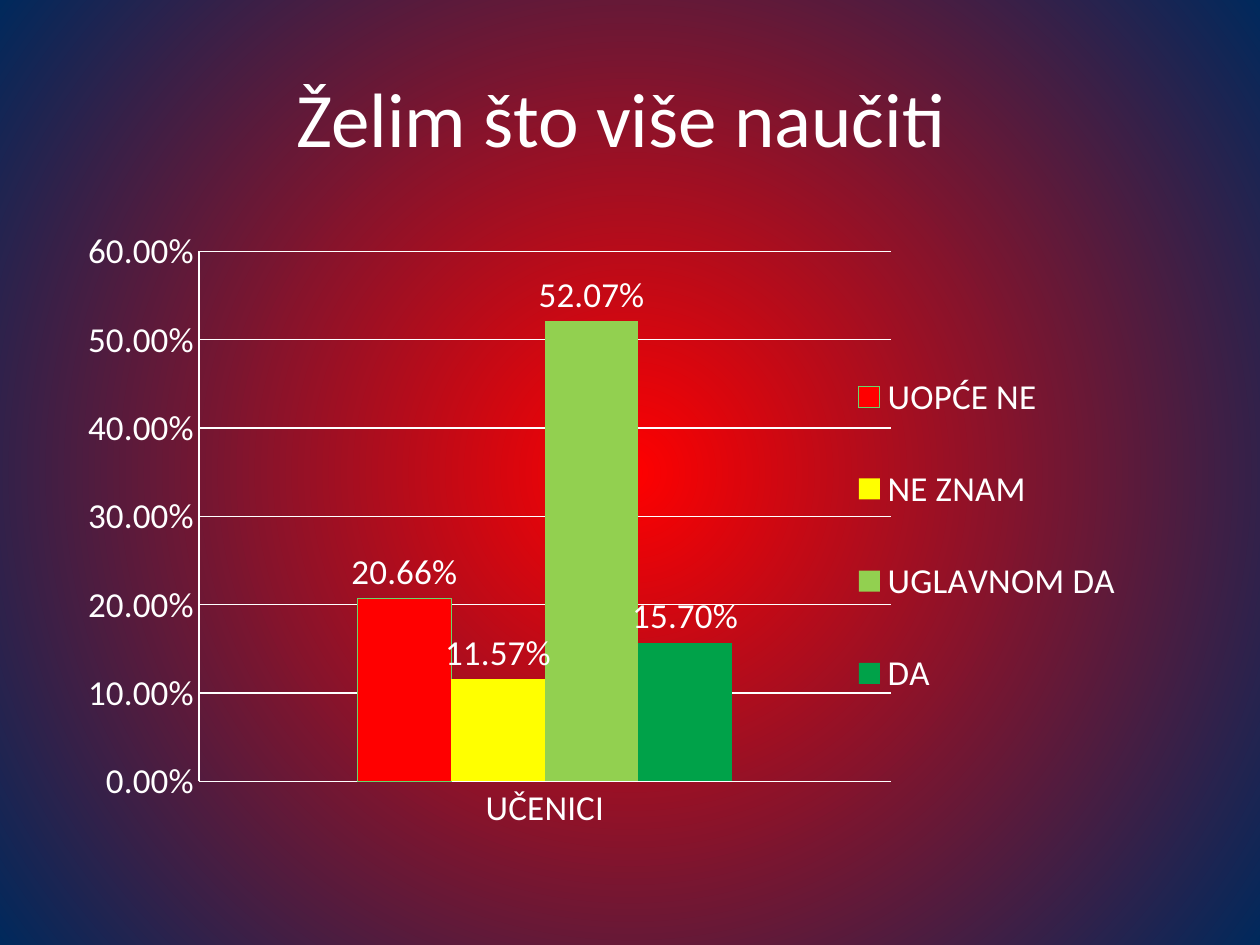
from lxml import etree
from pptx import Presentation
from pptx.chart.data import CategoryChartData
from pptx.dml.color import RGBColor
from pptx.enum.chart import (XL_CHART_TYPE, XL_LABEL_POSITION,
                             XL_LEGEND_POSITION, XL_TICK_MARK)
from pptx.enum.text import MSO_ANCHOR, PP_ALIGN
from pptx.oxml.ns import qn
from pptx.util import Pt

COLUMNS = XL_CHART_TYPE.COLUMN_CLUSTERED
OUTSIDE = XL_LABEL_POSITION.OUTSIDE_END
RIGHT = XL_LEGEND_POSITION.RIGHT
NO_TICK = XL_TICK_MARK.NONE
MIDDLE = MSO_ANCHOR.MIDDLE
CENTER = PP_ALIGN.CENTER

WHITE = RGBColor(0xFF, 0xFF, 0xFF)
RED = RGBColor(0xFF, 0x00, 0x00)
NAVY = RGBColor(0x00, 0x29, 0x5C)
YELLOW = RGBColor(0xFF, 0xFF, 0x00)
LIME = RGBColor(0x92, 0xD0, 0x50)
GREEN = RGBColor(0x00, 0xA2, 0x49)
OUTLINE = RGBColor(0x68, 0xD6, 0x6B)

FONT = "Calibri"
PERCENT = "0.00%"
ANSWERS = [
    ("UOPĆE NE", 0.2066, RED),
    ("NE ZNAM", 0.1157, YELLOW),
    ("UGLAVNOM DA", 0.5207, LIME),
    ("DA", 0.157, GREEN),
]


def px(n):
    """Turn pixels at 126 to the inch into EMU."""
    return round(n * 914400 / 126)


def style_font(font, size):
    """Set the white deck font at a size in points."""
    font.name = FONT
    font.size = Pt(size)
    font.color.rgb = WHITE


def set_background(s):
    """Fill the slide with a gradient spreading from its centre."""
    fill = s.background.fill
    fill.gradient()
    for stop, color, position in zip(fill.gradient_stops, (RED, NAVY), (0, 1)):
        stop.color.rgb = color
        stop.position = position
    grad = s.element.xpath(".//p:bg//a:gradFill")[0]
    grad.remove(grad.find(qn("a:lin")))
    circle = etree.SubElement(grad, qn("a:path"), path="circle")
    etree.SubElement(circle, qn("a:fillToRect"),
                     {side: "50000" for side in "ltrb"})


def add_title(s, text):
    """Place and fill the title placeholder."""
    sp = s.shapes.title
    sp.left, sp.top, sp.width, sp.height = map(px, (63, 38, 1134, 158))
    tf = sp.text_frame
    tf.vertical_anchor = MIDDLE
    p = tf.paragraphs[0]
    p.alignment = CENTER
    r = p.add_run()
    r.text = text
    style_font(r.font, 44)


def set_layout(parent, index, box, inner=False):
    """Pin a chart part to fractions of the chart area."""
    for old in parent.findall(qn("c:layout")):
        parent.remove(old)
    layout = etree.Element(qn("c:layout"))
    parent.insert(index, layout)
    manual = etree.SubElement(layout, qn("c:manualLayout"))
    settings = [("layoutTarget", "inner")] if inner else []
    settings += [("xMode", "edge"), ("yMode", "edge")]
    settings += zip("xywh", map(str, box))
    for tag, val in settings:
        etree.SubElement(manual, qn("c:" + tag), val=val)


def style_axis(axis):
    """Give an axis thin white lines and no ticks."""
    axis.major_tick_mark = axis.minor_tick_mark = NO_TICK
    style_font(axis.tick_labels.font, 20)
    axis.format.line.color.rgb = WHITE
    axis.format.line.width = Pt(0.75)


def style_series(series, color):
    """Colour a series and show its value above the column."""
    series.invert_if_negative = False
    series.format.fill.solid()
    series.format.fill.fore_color.rgb = color
    labels = series.data_labels
    labels.show_value = True
    labels.number_format = PERCENT
    labels.number_format_is_linked = False
    labels.position = OUTSIDE
    style_font(labels.font, 20)


def add_answer_chart(s):
    """Add the column chart of answers with its legend."""
    data = CategoryChartData(number_format=PERCENT)
    data.categories = ["UČENICI"]
    for name, value, _ in ANSWERS:
        data.add_series(name, [value])
    box = map(px, (63, 220, 1134, 624))
    chart = s.shapes.add_chart(COLUMNS, *box, data).chart
    chart.has_title = False
    style_font(chart.font, 10)

    plot = chart.plots[0]
    plot.gap_width = 339
    plot.overlap = 0
    plot.vary_by_categories = False
    for series, (_, _, color) in zip(plot.series, ANSWERS):
        style_series(series, color)
    line = plot.series[0].format.line
    line.color.rgb = OUTLINE
    line.width = Pt(0.75)

    style_axis(chart.category_axis)
    axis = chart.value_axis
    style_axis(axis)
    axis.minimum_scale, axis.maximum_scale, axis.major_unit = 0, 0.6, 0.1
    axis.tick_labels.number_format = PERCENT
    axis.tick_labels.number_format_is_linked = False
    axis.has_major_gridlines = True
    axis.major_gridlines.format.line.color.rgb = WHITE
    axis.major_gridlines.format.line.width = Pt(0.75)

    chart.has_legend = True
    chart.legend.position = RIGHT
    chart.legend.include_in_layout = False
    style_font(chart.legend.font, 20)
    area = chart.element.xpath(".//c:plotArea")[0]
    legend = chart.element.xpath(".//c:legend")[0]
    set_layout(area, 0, (0.12, 0.05, 0.61, 0.85), inner=True)
    set_layout(legend, 1, (0.69, 0.17, 0.25, 0.67))


def main():
    """Build the slide and save it."""
    prs = Presentation()
    prs.slide_width, prs.slide_height = px(1260), px(945)
    s = prs.slides.add_slide(prs.slide_layouts[5])
    set_background(s)
    add_title(s, "Želim što više naučiti ")
    add_answer_chart(s)
    prs.save("out.pptx")


if __name__ == "__main__":
    main()
